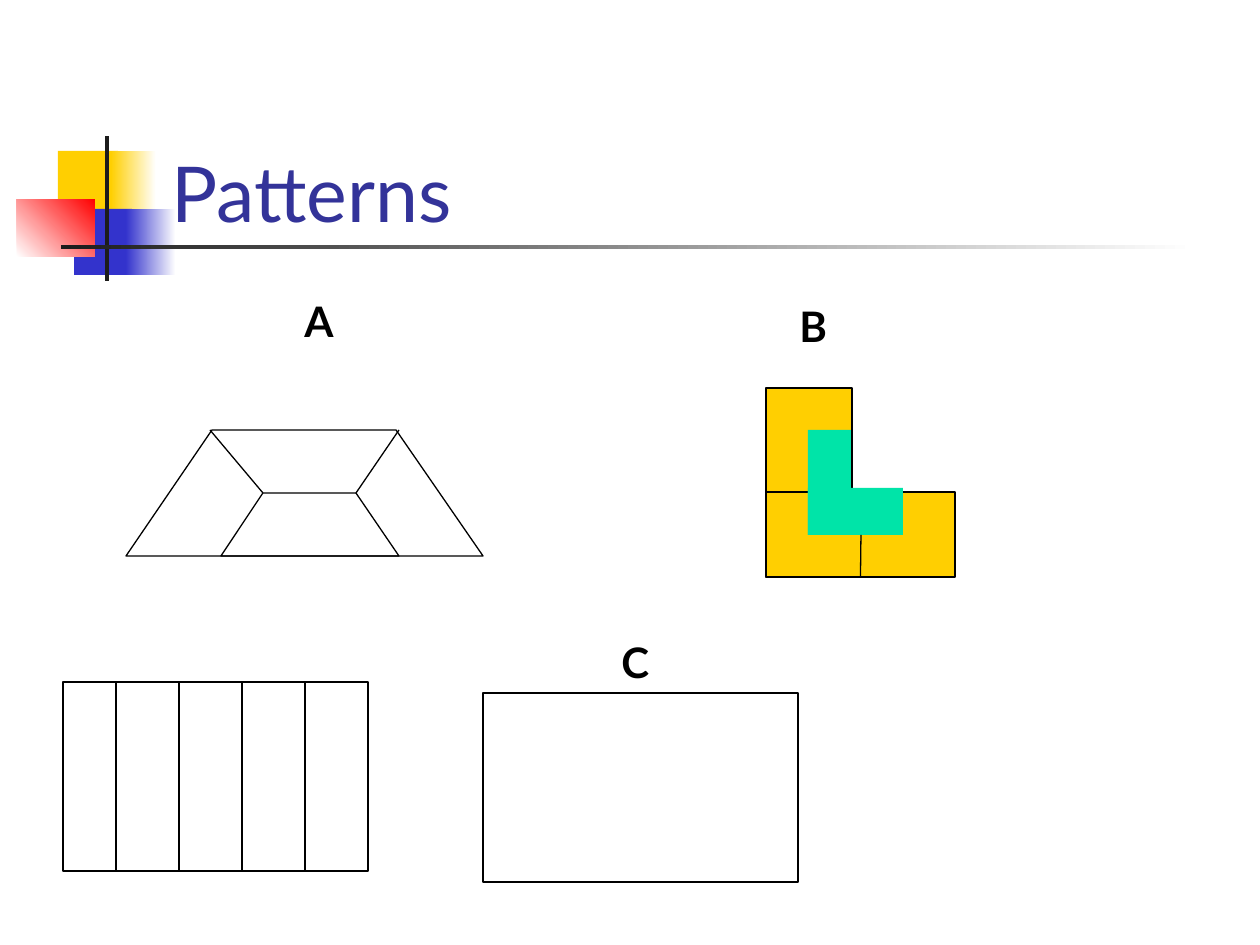
from lxml import etree
from pptx import Presentation
from pptx.dml.color import RGBColor
from pptx.enum import shapes, text
from pptx.oxml.ns import qn
from pptx.util import Pt

PX = 914400 / 126
SIZE = (1260, 945)
BLACK, GOLD, BLUE, GREEN = "000000", "FFCF01", "3333CC", "00E4A8"
WHITE, RED, DARK = "FFFFFF", "FF0000", "1C1C1C"

ORNAMENT = [
    ((58, 151, 60, 66), (GOLD,), 0),
    ((111, 151, 45, 66), (GOLD, WHITE), 0),
    ((74, 209, 58, 66), (BLUE,), 0),
    ((126, 209, 50, 66), (BLUE, WHITE), 0),
    ((17, 199, 78, 58), (WHITE, RED), 45),
    ((105, 136, 4, 145), (DARK,), 0),
    ((61, 245, 1134, 4), (DARK, WHITE), 0),
]
TITLE = ("Patterns", (159, 86, 1074, 158))
TITLE_FONT = {"size": Pt(44), "name": "Lato", "bold": False}
LABELS = [
    ("A", (292, 289, 54, 63)),
    ("C", (609, 630, 53, 63)),
    ("B", (787, 294, 54, 63)),
]
LABEL_FONT = {"size": Pt(24), "name": "Lato", "bold": True}
TRAPEZOIDS = [
    [(126, 556), (212, 430), (396, 430), (483, 556)],
    [(221, 556), (263, 493), (356, 493), (399, 556)],
]
TRAPEZOID_JOINS = [(210, 430, 263, 493), (399, 430, 356, 493)]
GOLD_ARMS = [(766, 388, 86, 189), (766, 492, 189, 85)]
GREEN_ARMS = [(808, 430, 43, 105), (808, 488, 95, 47)]
PLAIN_BOX = (483, 693, 315, 189)
STRIPED_BOX = (63, 682, 305, 189)
STRIPE_COUNT, STRIPE_WIDTH = 5, 63


def px(*values):
    return [round(v * PX) for v in values]


def color(value):
    return RGBColor.from_string(value)


def outline(item):
    item.line.color.rgb = color(BLACK)
    item.line.width = Pt(0.75)


def style(shape, fills=(), angle=0, lined=False):
    shape.shadow.inherit = False
    if len(fills) > 1:
        shape.fill.gradient()
        shape.fill.gradient_angle = angle
        for stop, value in zip(shape.fill.gradient_stops, fills):
            stop.color.rgb = color(value)
    elif fills:
        shape.fill.solid()
        shape.fill.fore_color.rgb = color(fills[0])
    else:
        shape.fill.background()
    if lined:
        outline(shape)
    else:
        shape.line.fill.background()


def add_box(slide, place, fills=(), angle=0, lined=False):
    box = slide.shapes.add_shape(shapes.MSO_SHAPE.RECTANGLE, *px(*place))
    style(box, fills, angle, lined)
    return box


def add_line(slide, ends):
    line = slide.shapes.add_connector(shapes.MSO_CONNECTOR.STRAIGHT, *px(*ends))
    outline(line)
    etree.SubElement(line._element.spPr, qn("a:effectLst"))
    return line


def add_text(slide, words, place, font, ink, frame_format):
    frame = slide.shapes.add_textbox(*px(*place)).text_frame
    for key, value in frame_format.items():
        setattr(frame, key, value)
    run = frame.paragraphs[0].add_run()
    run.text = words
    for key, value in font.items():
        setattr(run.font, key, value)
    run.font.color.rgb = color(ink)


def main():
    deck = Presentation()
    deck.slide_width, deck.slide_height = px(*SIZE)
    slide = deck.slides.add_slide(deck.slide_layouts[6])

    for place, fills, angle in ORNAMENT:
        add_box(slide, place, fills, angle)
    add_text(slide, *TITLE, TITLE_FONT, "333399",
             {"word_wrap": True, "vertical_anchor": text.MSO_ANCHOR.BOTTOM})

    for corners in TRAPEZOIDS:
        builder = slide.shapes.build_freeform(*corners[0], scale=PX)
        builder.add_line_segments(corners[1:], close=True)
        style(builder.convert_to_shape(), lined=True)
    for ends in TRAPEZOID_JOINS:
        add_line(slide, ends)

    for arm in GOLD_ARMS:
        foot = add_box(slide, arm, (GOLD,), lined=True)
    for arm in GREEN_ARMS:
        add_box(slide, arm, (GREEN,))
    add_line(slide, (861, 535, 861, 577)).end_connect(foot, 2)

    add_box(slide, PLAIN_BOX, lined=True)
    for words, place in LABELS:
        add_text(slide, words, place, LABEL_FONT, BLACK,
                 {"word_wrap": False, "auto_size": text.MSO_AUTO_SIZE.SHAPE_TO_FIT_TEXT})

    add_box(slide, STRIPED_BOX, lined=True)
    left, top, width, height = STRIPED_BOX
    for step in range(STRIPE_COUNT - 1, 0, -1):
        x = left + width - step * STRIPE_WIDTH
        add_line(slide, (x, top, x, top + height))

    deck.save("out.pptx")


if __name__ == "__main__":
    main()
